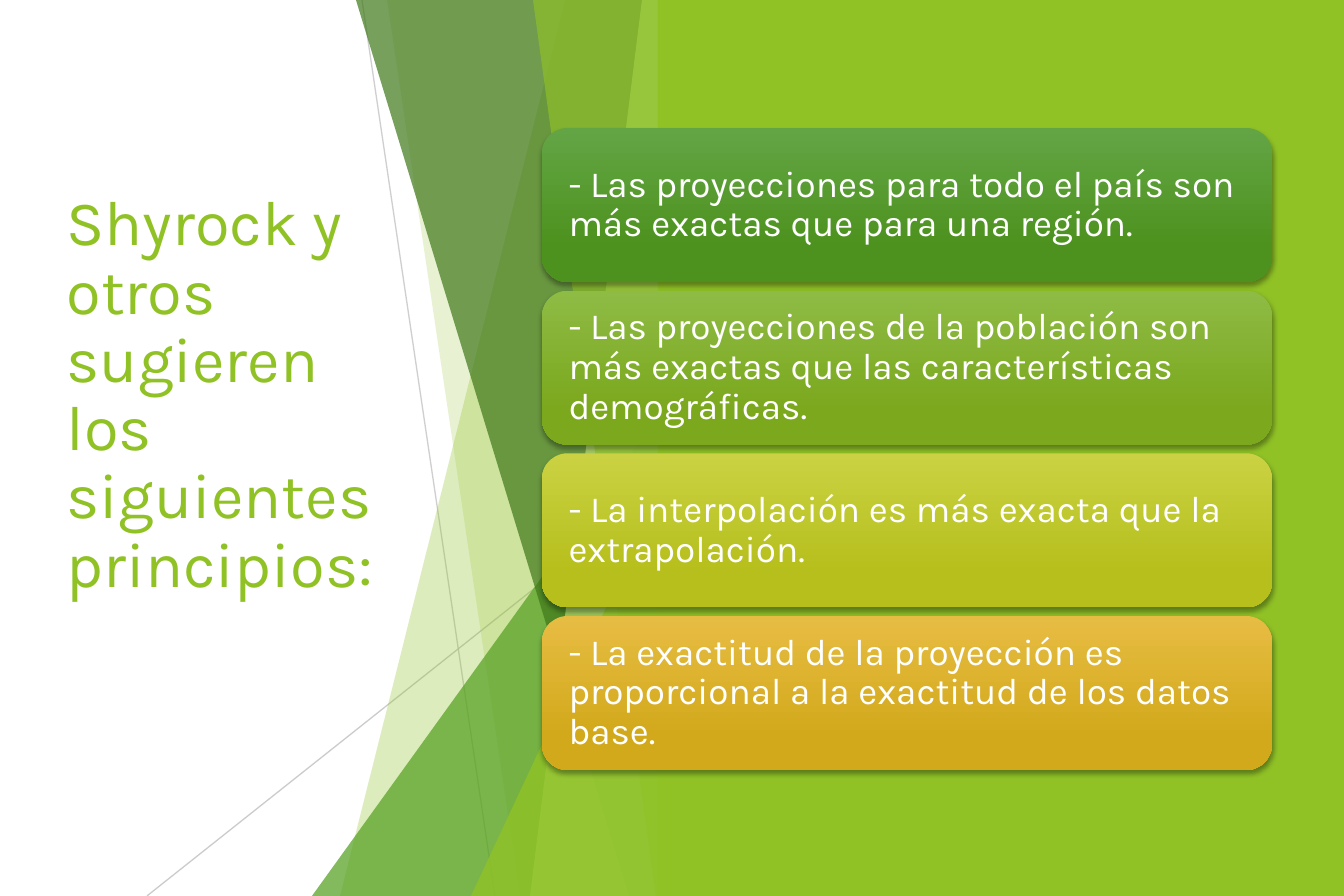
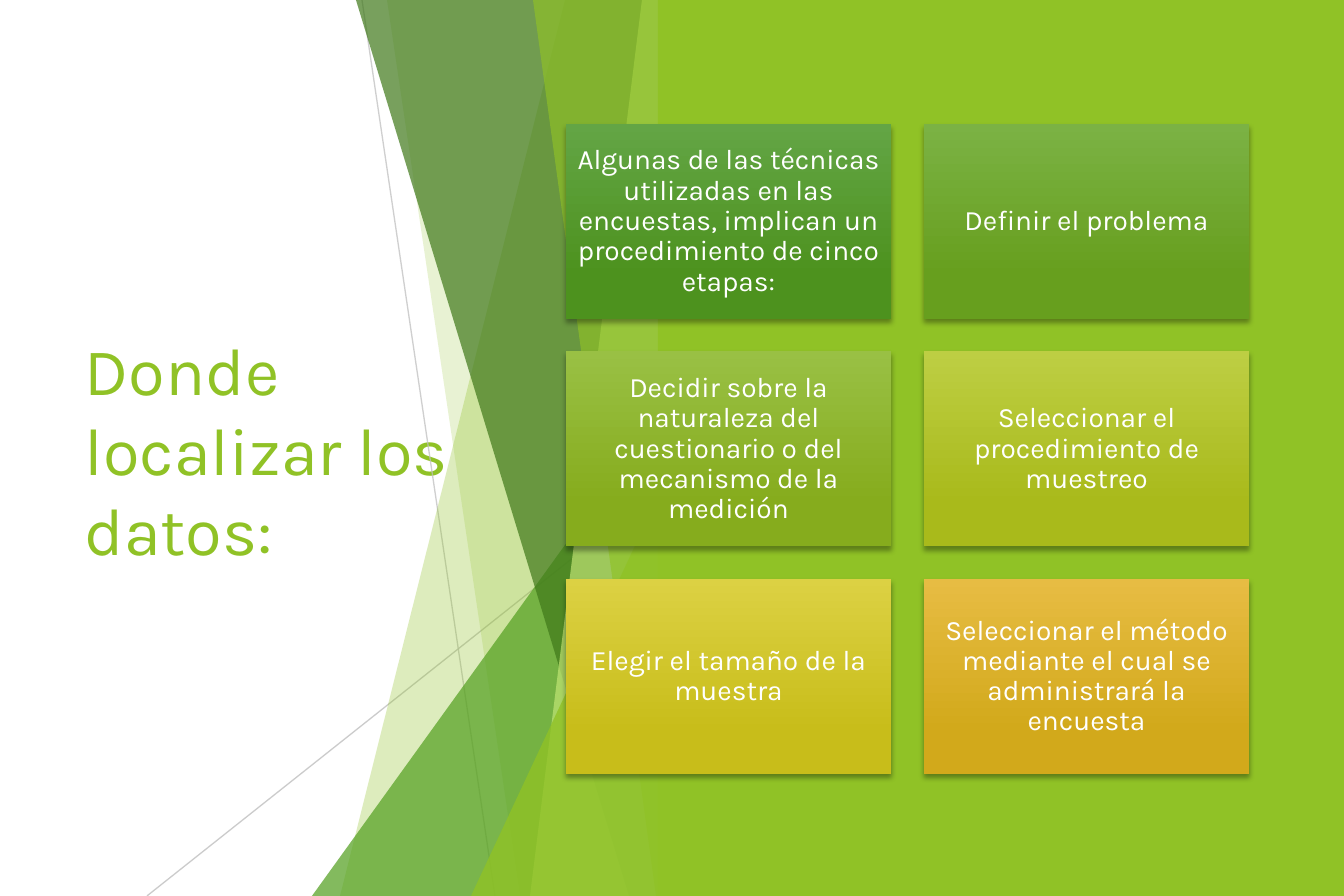
from dataclasses import dataclass

from lxml.etree import SubElement
from pptx import Presentation
from pptx.dml.color import RGBColor
from pptx.enum.shapes import MSO_CONNECTOR as CONN, MSO_SHAPE as SHAPE
from pptx.enum.text import MSO_ANCHOR as ANCHOR, MSO_AUTO_SIZE as AUTO, PP_ALIGN as ALIGN
from pptx.oxml.ns import qn
from pptx.util import Pt

PX = 7234
W, H = 1344, 896


@dataclass(frozen=True)
class Theme:
    font: str = "Karla"
    accent: str = "90C226"
    green: str = "54A021"
    dark: str = "3F7819"
    lime: str = "C0E474"
    rule: str = "BFBFBF"
    light: str = "FFFFFF"
    shadow: str = "000000"


T = Theme()

RULES = [((362, 0), (495, H), 75), ((671, 480), (147, H), 80)]
EDGE = 671
PANEL_LEFT = 658
FACETS = [
    ("band", 565, 340, T.accent, 30),
    ("band", 387, 520, T.accent, 20),
    ("wedge", 312, 398, T.green, 72),
    ("band", 356, 629, T.dark, 70),
    ("band", 642, 530, T.lime, 70),
    ("band", 533, 656, T.accent, 65),
    ("wedge", 471, 469, T.accent, 80),
]

SLIDES = [
    {
        "title": "Shyrock y otros sugieren los siguientes principios:",
        "title_box": (54, 185, 350, 426),
        "title_size": 36,
        "title_spacing": 0.9,
        "title_anchor": ANCHOR.TOP,
        "shape": SHAPE.ROUNDED_RECTANGLE,
        "area": (542, 128, 730, 642),
        "columns": 1,
        "card": (730, 154),
        "inset": 19,
        "align": ALIGN.LEFT,
        "size": 21,
        "cards": [
            ("- Las proyecciones para todo el país son más exactas que para una región.",
             "63A545", "4D921E"),
            ("- Las proyecciones de la población son más exactas que las "
             "características demográficas.", "8EBB44", "7BA81D"),
            ("- La interpolación es más exacta que la extrapolación.", "CAD243", "B6BF1B"),
            ("- La exactitud de la proyección es proporcional a la exactitud de "
             "los datos base.", "E7BC43", "D2A91B"),
        ],
    },
    {
        "title": "Donde localizar los datos:",
        "title_box": (72, 181, 391, 535),
        "title_size": 38,
        "title_spacing": 1.0,
        "title_anchor": ANCHOR.MIDDLE,
        "shape": SHAPE.RECTANGLE,
        "area": (566, 124, 683, 650),
        "columns": 2,
        "card": (325, 195),
        "inset": 9,
        "align": ALIGN.CENTER,
        "size": 16,
        "cards": [
            ("Algunas de las técnicas utilizadas en las encuestas, implican un "
             "procedimiento de cinco etapas:", "63A545", "4D921E"),
            ("Definir el problema", "7BB244", "679F1E"),
            ("Decidir sobre la naturaleza del cuestionario o del mecanismo de la medición",
             "99C044", "86AC1D"),
            ("Seleccionar el procedimiento de muestreo", "BDCE43", "A9BA1B"),
            ("Elegir el tamaño de la muestra", "DCD143", "C8BD1A"),
            ("Seleccionar el método mediante el cual se administrará la encuesta",
             "E7BC43", "D2A91B"),
        ],
    },
]


def rgb(color):
    return RGBColor.from_string(color)


def emu(*lengths):
    return [round(n * PX) for n in lengths]


def set_alpha(sp, percent):
    for color in sp._element.spPr.iter(qn("a:srgbClr")):
        SubElement(color, qn("a:alpha"), val=str(percent * 1000))


def fill_flat(sp, color, percent=100):
    sp.shadow.inherit = False
    sp.fill.solid()
    sp.fill.fore_color.rgb = rgb(color)
    sp.line.fill.background()
    if percent < 100:
        set_alpha(sp, percent)


def write(sp, text, size, color, align, spacing, anchor):
    tf = sp.text_frame
    tf.word_wrap = True
    tf.auto_size = AUTO.NONE
    tf.vertical_anchor = anchor
    p = tf.paragraphs[0]
    p.alignment = align
    p.line_spacing = spacing
    r = p.add_run()
    r.text = text
    r.font.name = T.font
    r.font.size = Pt(size)
    r.font.color.rgb = rgb(color)


def add_backdrop(s):
    for start, end, percent in RULES:
        line = s.shapes.add_connector(CONN.STRAIGHT, *emu(*start, *end))
        line.line.color.rgb = rgb(T.rule)
        line.line.width = Pt(0.75)
        set_alpha(line, percent)
        SubElement(line._element.spPr, qn("a:effectLst"))
    for kind, a, b, color, percent in FACETS:
        if kind == "band":
            outline = s.shapes.build_freeform(a, 0, scale=PX)
            outline.add_line_segments([(EDGE, 0), (EDGE, H), (b, H)], close=True)
            sp = outline.convert_to_shape()
        else:
            sp = s.shapes.add_shape(SHAPE.ISOSCELES_TRIANGLE, *emu(a, b, EDGE - a, H - b))
            sp.adjustments[0] = 1
        fill_flat(sp, color, percent)
    panel = s.shapes.add_shape(SHAPE.RECTANGLE, *emu(PANEL_LEFT, 0, W - PANEL_LEFT, H))
    fill_flat(panel, T.accent)


def add_title(s, d):
    title = s.shapes.title
    title.left, title.top, title.width, title.height = emu(*d["title_box"])
    write(title, d["title"], d["title_size"], T.accent, ALIGN.LEFT,
          d["title_spacing"], d["title_anchor"])


def fill_card(sp, colors):
    sp.fill.gradient()
    sp.fill.gradient_angle = 270
    for stop, color, position in zip(sp.fill.gradient_stops, colors, (0, 0.78)):
        stop.color.rgb = rgb(color)
        stop.position = position
    sp.line.fill.background()
    sp.shadow.inherit = False
    effects = sp._element.spPr.find(qn("a:effectLst"))
    shadow = SubElement(effects, qn("a:outerShdw"), blurRad=str(Pt(3)), dist=str(Pt(2)),
                        dir="5400000", rotWithShape="0")
    color = SubElement(shadow, qn("a:srgbClr"), val=T.shadow)
    SubElement(color, qn("a:alpha"), val="35000")


def add_cards(s, d):
    left, top, width, height = d["area"]
    w, h = d["card"]
    columns = d["columns"]
    rows = len(d["cards"]) // columns
    step_x = (width - w) / max(columns - 1, 1)
    step_y = (height - h) / (rows - 1)
    for i, (text, *colors) in enumerate(d["cards"]):
        row, column = divmod(i, columns)
        sp = s.shapes.add_shape(
            d["shape"], *emu(left + column * step_x, top + row * step_y, w, h))
        fill_card(sp, colors)
        tf = sp.text_frame
        tf.margin_left = tf.margin_right = tf.margin_top = tf.margin_bottom = d["inset"] * PX
        write(sp, text, d["size"], T.light, d["align"], 0.9, ANCHOR.MIDDLE)


def main():
    prs = Presentation()
    prs.slide_width, prs.slide_height = emu(W, H)
    for d in SLIDES:
        s = prs.slides.add_slide(prs.slide_layouts[5])
        add_title(s, d)
        add_backdrop(s)
        add_cards(s, d)
    prs.save("out.pptx")


if __name__ == "__main__":
    main()
